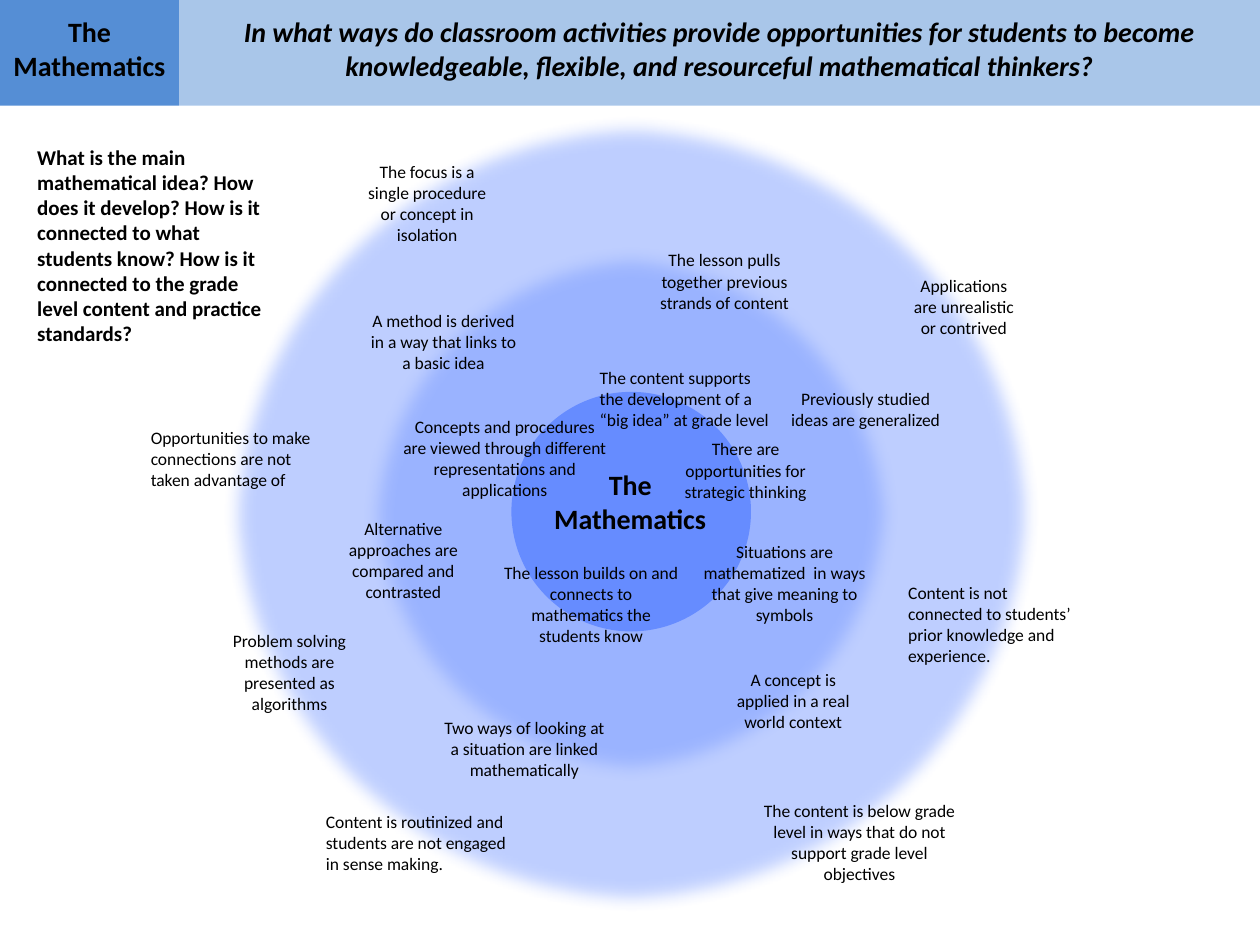
from lxml.etree import SubElement
from pptx import Presentation
from pptx.dml.color import RGBColor
from pptx.enum.shapes import MSO_SHAPE
from pptx.enum.text import MSO_ANCHOR, PP_ALIGN
from pptx.oxml.ns import qn
from pptx.util import Cm, Pt

prs = Presentation()
prs.slide_width, prs.slide_height = Cm(25.4), Cm(19.05)
slide = prs.slides.add_slide(prs.slide_layouts[6])


def add_area(kind, left, top, width, height, color, opacity=100, soft_edge=0):
    area = slide.shapes.add_shape(kind, Cm(left), Cm(top), Cm(width), Cm(height))
    area.shadow.inherit = False
    area.fill.solid()
    area.fill.fore_color.rgb = RGBColor.from_string(color)
    area.line.fill.background()
    if opacity < 100:
        color_node = area._element.spPr.find(qn("a:solidFill"))[0]
        SubElement(color_node, qn("a:alpha"), val=str(opacity * 1000))
    if soft_edge:
        effects = area._element.spPr.find(qn("a:effectLst"))
        SubElement(effects, qn("a:softEdge"), rad=str(Pt(soft_edge)))
    return area


def write(text, area=None, box=None, size=10, bold=False, italic=False,
          align=PP_ALIGN.CENTER, top_inset=0.13):
    if area is None:
        area = slide.shapes.add_textbox(*[Cm(length) for length in box])
    frame = area.text_frame
    frame.word_wrap = True
    frame.vertical_anchor = MSO_ANCHOR.TOP
    frame.margin_top = Cm(top_inset)
    paragraph = frame.paragraphs[0]
    paragraph.alignment = align
    run = paragraph.add_run()
    run.text = text
    run.font.name = "Calibri"
    run.font.size = Pt(size)
    run.font.bold = bold
    run.font.italic = italic
    run.font.color.rgb = RGBColor.from_string("000000")


write("What is the main mathematical idea? How does it develop? How is it connected to "
      "what students know? How is it connected to the grade level content and practice "
      "standards?", box=(0.5, 2.78, 5.2, 4.37), size=12, bold=True, align=PP_ALIGN.LEFT)

rings = [
    (4.5, 2.34, 16.48, 16.08, 31, 10),
    (7.29, 4.93, 10.87, 10.87, 25, 10),
    (10.31, 7.9, 4.83, 4.83, 50, 0),
]
for left, top, width, height, opacity, soft_edge in rings:
    add_area(MSO_SHAPE.OVAL, left, top, width, height, "3366FF", opacity, soft_edge)
write("The Mathematics", box=(10.9, 9.3, 3.61, 1.63), size=16, bold=True)

question_band = add_area(MSO_SHAPE.RECTANGLE, 3.61, 0, 21.79, 2.13, "558ED5", 50)
write("In what ways do classroom activities provide opportunities for students to become "
      "knowledgeable, flexible, and resourceful mathematical thinkers?",
      area=question_band, size=16, bold=True, italic=True, top_inset=0.3)
topic_band = add_area(MSO_SHAPE.RECTANGLE, 0, 0, 3.61, 2.13, "558ED5")
write("The Mathematics", area=topic_band, size=16, bold=True, top_inset=0.3)

centered_statements = [
    (7.11, 3.12, 3.0, 1.96, "The focus is a single procedure or concept in isolation"),
    (7.16, 6.12, 3.56, 1.55, "A method is derived in a way that links to a basic idea"),
    (8.69, 14.33, 3.76, 1.55, "Two ways of looking at a situation are linked mathematically"),
    (13.72, 10.77, 4.19, 1.96,
     "Situations are mathematized  in ways that give meaning to symbols"),
    (6.76, 10.31, 2.74, 1.96, "Alternative approaches are compared and contrasted"),
    (7.85, 8.26, 4.65, 1.96,
     "Concepts and procedures are viewed through different representations and applications"),
    (4.11, 12.57, 3.45, 1.96, "Problem solving methods are presented as algorithms"),
    (9.91, 11.2, 4.01, 1.96,
     "The lesson builds on and connects to mathematics the students know"),
    (13.34, 8.71, 3.38, 1.55, "There are opportunities for strategic thinking"),
    (14.35, 13.36, 3.28, 1.55, "A concept is applied in a real world context"),
    (15.09, 16.0, 4.47, 1.96,
     "The content is below grade level in ways that do not support grade level objectives"),
    (18.06, 5.41, 2.74, 1.55, "Applications are unrealistic or contrived"),
    (12.88, 4.9, 3.45, 1.55, "The lesson pulls together previous strands of content"),
    (15.62, 7.7, 3.66, 1.12, "Previously studied ideas are generalized"),
]
left_statements = [
    (11.84, 7.26, 4.04, 1.55,
     "The content supports the development of a “big idea” at grade level"),
    (6.32, 16.21, 4.37, 1.55,
     "Content is routinized and students are not engaged in sense making."),
    (2.79, 8.48, 3.81, 1.55, "Opportunities to make connections are not taken advantage of"),
    (18.06, 11.61, 4.04, 1.96,
     "Content is not connected to students’ prior knowledge and experience."),
]
for align, statements in [(PP_ALIGN.CENTER, centered_statements),
                          (PP_ALIGN.LEFT, left_statements)]:
    for *box, statement in statements:
        write(statement, box=box, align=align)

prs.save("out.pptx")
